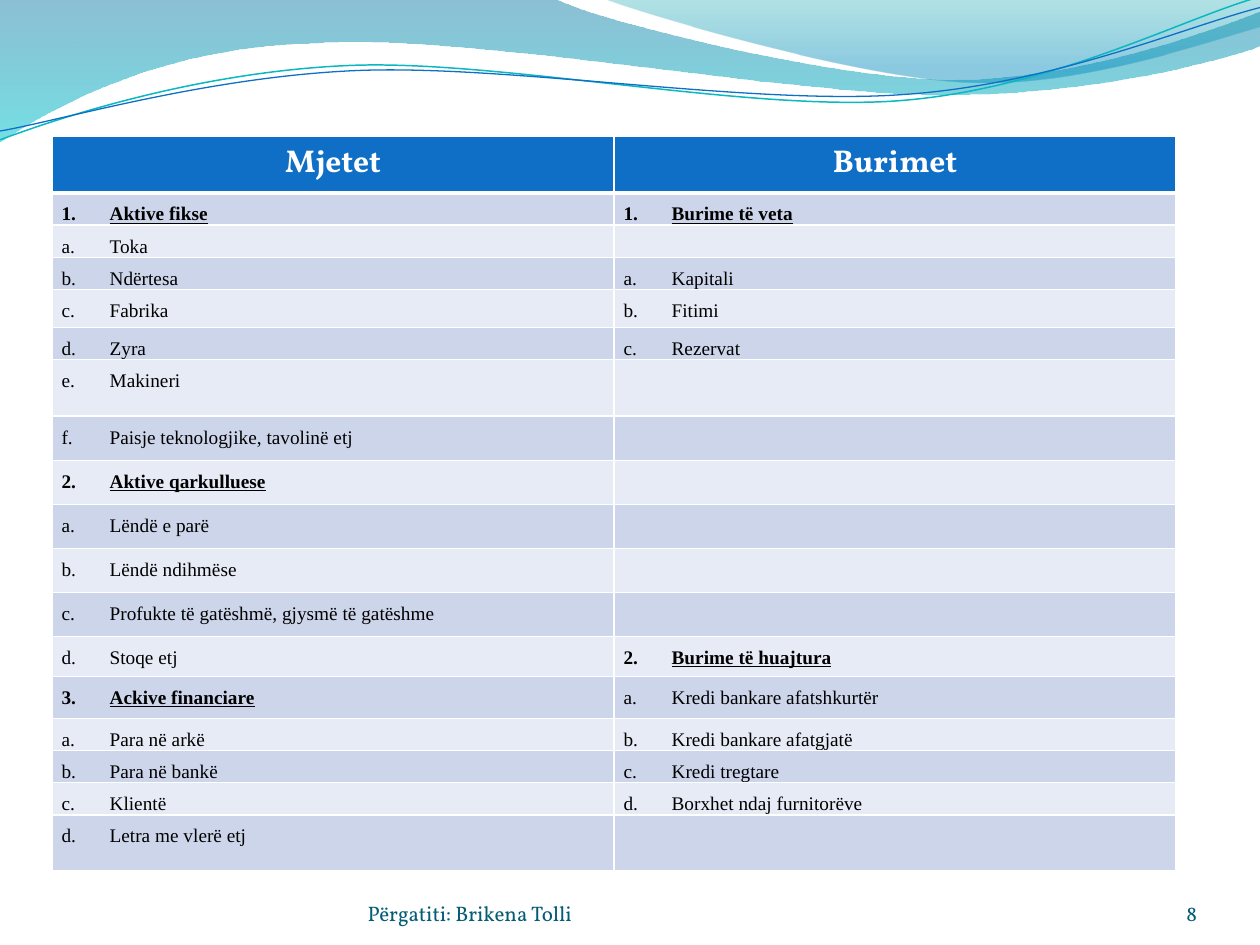
from math import cos, radians, sin

from lxml import etree
from pptx import Presentation
from pptx.dml.color import RGBColor
from pptx.enum.text import MSO_ANCHOR, PP_ALIGN
from pptx.oxml.ns import qn
from pptx.util import Cm, Pt

BOTTOM = MSO_ANCHOR.BOTTOM
LEFT, CENTER, RIGHT, JUSTIFY = PP_ALIGN.LEFT, PP_ALIGN.CENTER, PP_ALIGN.RIGHT, PP_ALIGN.JUSTIFY

WHITE = RGBColor(0xFF, 0xFF, 0xFF)
BLACK = RGBColor(0, 0, 0)
BLUE = RGBColor(0x0F, 0x6F, 0xC6)
TEAL = RGBColor(0x0A, 0xB8, 0xBF)
FOOTER = RGBColor(0x04, 0x5D, 0x75)
BANDS = (RGBColor(0xCC, 0xD5, 0xEA), RGBColor(0xE7, 0xEB, 0xF5))
WAVE_TOP, WAVE_BOTTOM = RGBColor(0x00, 0x74, 0xA1), RGBColor(0x00, 0xC6, 0xCF)
CREST_TOP, CREST_BOTTOM = RGBColor(0x00, 0xA1, 0xA9), RGBColor(0x00, 0x8B, 0xBF)

DISPLAY_FONT, BODY_FONT = "Vollkorn", "Times New Roman"
LINE_TILT = 357.3
LINE_CENTER = (4.99, 0.58)

# Outlines in inches: a pair is a straight step, six numbers are a Bézier step.
WAVE = [(0, 0), (4.4, -0.01), (4.76, 0.17, 6.64, 0.63, 7.58, 0.63),
        (8.53, 0.63, 9.58, 0.26, 10, 0.09), (10.01, 0.36),
        (9.83, 0.44, 8.7, 0.76, 7.46, 0.75), (6.22, 0.75, 3.82, 0.28, 2.57, 0.34),
        (1.29, 0.36, 0.46, 0.83, -0.01, 1.13)]
CREST = [(4.79, -0.01), (5.09, 0.11, 6.82, 0.62, 7.69, 0.65),
         (8.56, 0.69, 9.61, 0.32, 10, 0.21), (10, 0)]
TEAL_LINE = [(0, 1.11), (0.48, 0.93, 1.58, 0.57, 2.77, 0.52),
             (3.95, 0.47, 5.93, 0.89, 7.13, 0.8), (8.33, 0.71, 9.38, 0.15, 9.98, -0.02)]
BLUE_LINE = [(0, 1.04), (0.47, 0.96, 1.64, 0.61, 2.83, 0.56),
             (4.03, 0.51, 5.97, 0.84, 7.17, 0.75), (8.36, 0.67, 9.41, 0.21, 10, 0.06)]

HEADINGS = ("Mjetet", "Burimet")
# Row height in cm, assets, sources
ENTRIES = [
    (0.65, "1. Aktive fikse", "1. Burime të veta"),
    (0.65, "a. Toka", ""),
    (0.65, "b. Ndërtesa", "a. Kapitali"),
    (0.76, "c. Fabrika", "b. Fitimi"),
    (0.65, "d. Zyra", "c. Rezervat"),
    (1.14, "e. Makineri", ""),
    (0.89, "f. Paisje teknologjike, tavolinë etj", ""),
    (0.89, "2. Aktive qarkulluese", ""),
    (0.89, "a. Lëndë e parë", ""),
    (0.88, "b. Lëndë ndihmëse", ""),
    (0.89, "c. Profukte të gatëshmë, gjysmë të gatëshme", ""),
    (0.81, "d. Stoqe etj", "2. Burime të huajtura"),
    (0.84, "3. Ackive financiare", "a. Kredi bankare afatshkurtër"),
    (0.65, "a. Para në arkë", "b. Kredi bankare afatgjatë"),
    (0.65, "b. Para në bankë", "c. Kredi tregtare"),
    (0.65, "c. Klientë", "d. Borxhet ndaj furnitorëve"),
    (1.12, "d. Letra me vlerë etj", ""),
]


def to_points(step, tilt):
    """Give the points of a step as slide lengths, turned back by the tilt."""
    angle = radians(-tilt)
    center_x, center_y = LINE_CENTER
    points = []
    for x, y in zip(step[::2], step[1::2]):
        dx, dy = x - center_x, y - center_y
        points.append((Cm(2.54 * (center_x + dx * cos(angle) - dy * sin(angle))),
                       Cm(2.54 * (center_y + dx * sin(angle) + dy * cos(angle)))))
    return points


class SlideBuilder:
    def __init__(self, slide):
        self.slide = slide

    def outline(self, outline, close, tilt=0):
        steps = [to_points(step, tilt) for step in outline]
        builder = self.slide.shapes.build_freeform(*steps[0][0])
        builder.add_line_segments([step[-1] for step in steps[1:]], close=close)
        shape = builder.convert_to_shape()
        segments = list(shape.element.spPr.iter(qn("a:lnTo")))
        for segment, step in zip(segments, steps[1:]):
            if len(step) == 3:
                curve = etree.Element(qn("a:cubicBezTo"))
                for x, y in step:
                    etree.SubElement(curve, qn("a:pt"),
                                     x=str(x - shape.left), y=str(y - shape.top))
                segment.getparent().replace(segment, curve)
        shape.rotation = tilt
        shape.shadow.inherit = False
        return shape

    def wave(self, outline, stops):
        """Fill an outline downwards; a stop is position, colour, opacity in percent."""
        shape = self.outline(outline, True)
        shape.line.fill.background()
        shape.fill.gradient()
        shape.fill.gradient_angle = 270
        for stop, (position, color, _) in zip(shape.fill.gradient_stops, stops):
            stop.position = position
            stop.color.rgb = color
        colors = shape.element.spPr.iter(qn("a:srgbClr"))
        for color, (_, _, opacity) in zip(list(colors), stops):
            etree.SubElement(color, qn("a:alpha"), val=str(opacity * 1000))

    def curve(self, outline, color, width):
        shape = self.outline(outline, False, LINE_TILT)
        shape.fill.background()
        shape.line.color.rgb = color
        shape.line.width = Pt(width)

    def run(self, paragraph, text, font, size, color, bold=False, underline=False):
        run = paragraph.add_run()
        run.text = text
        run.font.name = font
        run.font.size = Pt(size)
        run.font.color.rgb = color
        run.font.bold = bold
        run.font.underline = underline

    def footer(self, text, left, width, alignment):
        box = self.slide.shapes.add_textbox(Cm(left), Cm(17.65), Cm(width), Cm(1.02))
        frame = box.text_frame
        frame.word_wrap = True
        frame.vertical_anchor = BOTTOM
        frame.margin_left = frame.margin_right = frame.margin_top = frame.margin_bottom = 0
        paragraph = frame.paragraphs[0]
        paragraph.alignment = alignment
        self.run(paragraph, text, DISPLAY_FONT, 12, FOOTER)

    def paint_cell(self, cell, fill, top=1, bottom=1):
        cell.fill.solid()
        cell.fill.fore_color.rgb = fill
        properties = cell._tc.get_or_add_tcPr()
        sides = (("L", 1), ("R", 1), ("T", top), ("B", bottom))
        for index, (side, width) in enumerate(sides):
            border = etree.Element(qn(f"a:ln{side}"), w=str(Pt(width)))
            solid = etree.SubElement(border, qn("a:solidFill"))
            etree.SubElement(solid, qn("a:srgbClr"), val=str(WHITE))
            properties.insert(index, border)

    def entry(self, cell, text):
        """Write a marker and its label with a hanging indent."""
        cell.margin_left = cell.margin_right = Cm(0.19)
        cell.margin_top = cell.margin_bottom = 0
        paragraph = cell.text_frame.paragraphs[0]
        if not text:
            etree.SubElement(paragraph._p, qn("a:endParaRPr"), sz="1100")
            return
        marker, label = text.split(" ", 1)
        heading = marker[0].isdigit()
        paragraph.alignment = JUSTIFY
        paragraph.line_spacing = 1.5
        properties = paragraph._p.get_or_add_pPr()
        properties.set("marL", str(Cm(0.97)))
        properties.set("indent", str(-Cm(0.97)))
        self.run(paragraph, marker + "\t", BODY_FONT, 11, BLACK, heading)
        self.run(paragraph, label, BODY_FONT, 11, BLACK, heading, heading)

    def balance_table(self, headings, entries):
        heights = [1.11] + [height for height, *_ in entries]
        table = self.slide.shapes.add_table(
            len(heights), len(headings), Cm(1.05), Cm(2.75), Cm(22.66), Cm(sum(heights))).table
        for row, height in zip(table.rows, heights):
            row.height = Cm(height)
        for column, heading in enumerate(headings):
            cell = table.cell(0, column)
            self.paint_cell(cell, BLUE, bottom=3)
            paragraph = cell.text_frame.paragraphs[0]
            paragraph.alignment = CENTER
            self.run(paragraph, heading, DISPLAY_FONT, 18, WHITE, bold=True)
        for row, (_, *texts) in enumerate(entries, start=1):
            for column, text in enumerate(texts):
                cell = table.cell(row, column)
                self.paint_cell(cell, BANDS[(row - 1) % 2], top=3 if row == 1 else 1)
                self.entry(cell, text)


def main():
    presentation = Presentation()
    presentation.slide_width, presentation.slide_height = Cm(25.4), Cm(19.05)
    builder = SlideBuilder(presentation.slides.add_slide(presentation.slide_layouts[6]))
    builder.wave(WAVE, [(0, WAVE_TOP, 45), (1, WAVE_BOTTOM, 55)])
    builder.wave(CREST, [(0, CREST_TOP, 30), (0.8, CREST_BOTTOM, 45)])
    builder.curve(TEAL_LINE, TEAL, 0.85)
    builder.curve(BLUE_LINE, BLUE, 0.75)
    builder.balance_table(HEADINGS, ENTRIES)
    builder.footer("8", 22.02, 2.11, RIGHT)
    builder.footer("Përgatiti: Brikena Tolli", 7.41, 9.32, LEFT)
    presentation.save("out.pptx")


if __name__ == "__main__":
    main()
